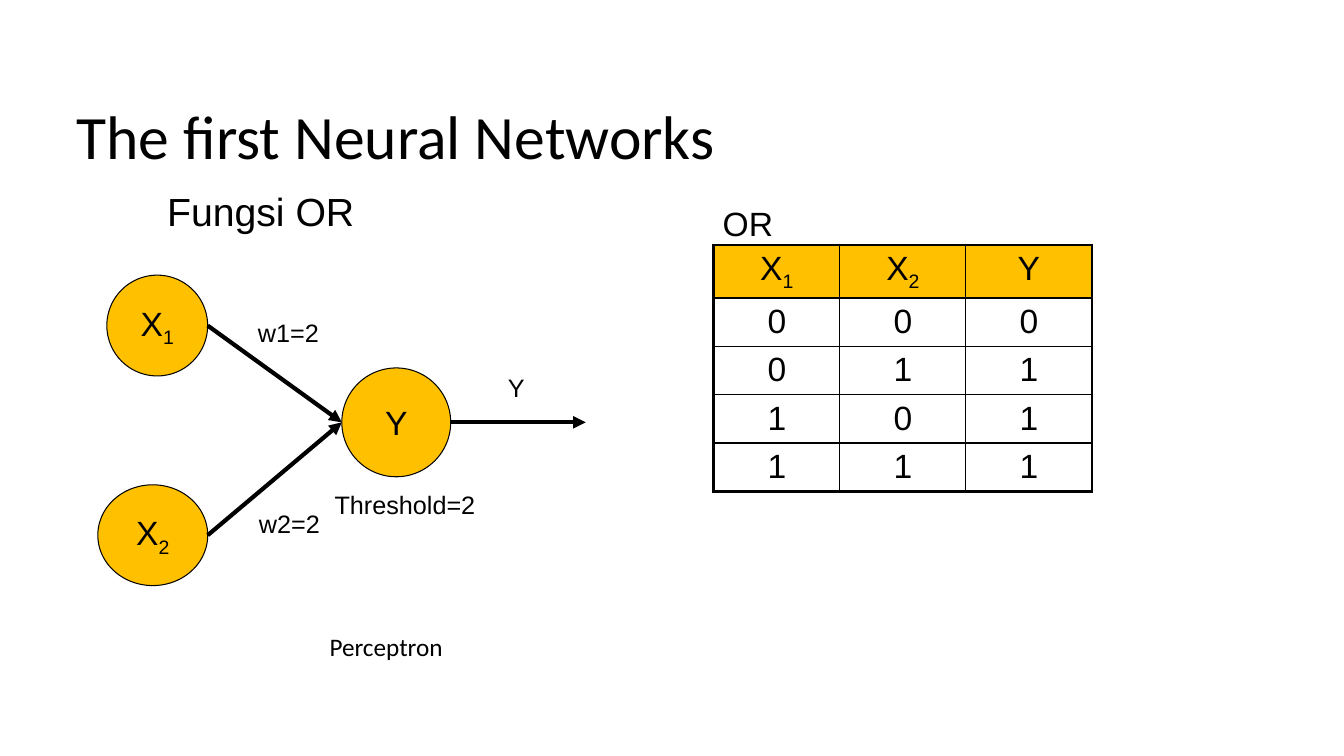
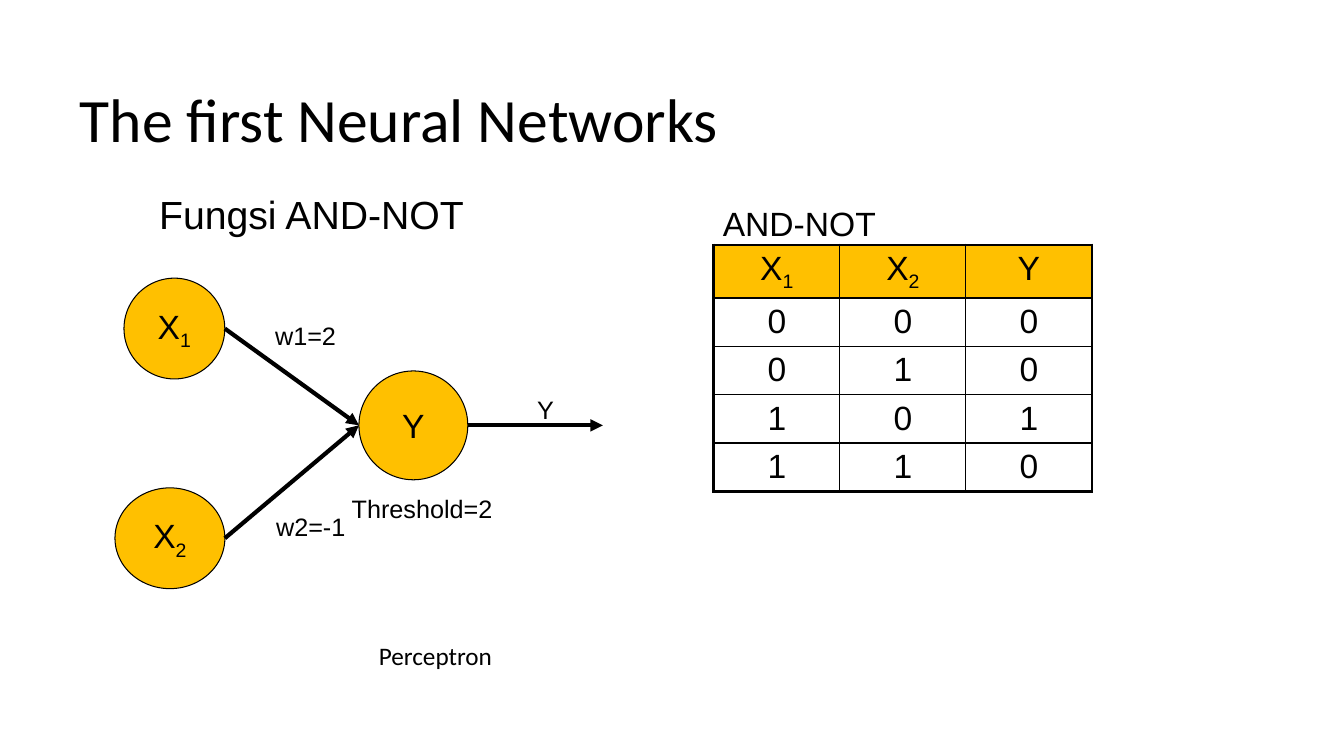
"""Build two slides showing perceptrons for the OR and AND-NOT functions."""
from lxml import etree
from pptx import Presentation
from pptx import util as u
from pptx.dml.color import RGBColor
from pptx.enum import shapes, text
from pptx.oxml import ns

PX = 9144
BLACK, AMBER = "000000", "FFC000"
SANS, HEADING = "Arial", "Calibri"
THIN, THICK = 1, 2.25

TITLE = "The first Neural Networks"
HEADERS = ["X1", "X2", "Y"]
INPUTS = [(0, 0), (0, 1), (1, 0), (1, 1)]
TABLE_LEFT, TABLE_TOP, COLUMN_WIDTH, ROW_HEIGHT = 708, 243, 125, 48

NODES = {"X1": (106, 273, 100, 100), "X2": (97, 481, 109, 100), "Y": (339, 365, 108, 108)}
OUTPUT_LENGTH = 134

SLIDES = [
    {
        "title_at": (66, 76), "shift": (0, 0), "outputs": [0, 1, 1, 1],
        "labels": [
            ("w1=2", 246, 310, 81, 18, SANS),
            ("w2=2", 247, 499, 81, 18, SANS),
            ("Threshold=2", 322, 481, 160, 18, SANS),
            ("Fungsi OR", 156, 181, 206, 28, SANS),
            ("OR", 707, 196, 70, 24, SANS),
            ("Y", 494, 364, 37, 18, SANS),
            ("Perceptron", 317, 621, 134, 18, HEADING),
        ],
    },
    {
        "title_at": (69, 59), "shift": (17, 3), "outputs": [0, 0, 1, 0],
        "labels": [
            ("w1=2", 263, 313, 81, 18, SANS),
            ("w2=-1", 264, 502, 90, 18, SANS),
            ("Threshold=2", 339, 484, 160, 18, SANS),
            ("Fungsi AND-NOT", 148, 184, 325, 28, SANS),
            ("AND-NOT", 707, 196, 172, 24, SANS),
            ("Y", 523, 386, 37, 18, SANS),
            ("Perceptron", 366, 630, 134, 18, HEADING),
        ],
    },
]


def px(*lengths):
    return [u.Emu(length * PX) for length in lengths]


def color(value):
    return RGBColor.from_string(value)


def style(para, size, font=SANS, align=text.PP_ALIGN.LEFT):
    para.alignment = align
    para.font.size = u.Pt(size)
    para.font.name = font
    para.font.bold = False
    para.font.color.rgb = color(BLACK)


def write_symbol(para, symbol):
    para.add_run().text = symbol[0]
    if symbol[1:]:
        span = para.add_run()
        span.text = symbol[1:]
        span._r.get_or_add_rPr().set("baseline", "-25000")
    style(para, 24, align=text.PP_ALIGN.CENTER)


def add_title(page, left, top):
    title = page.shapes.title
    title.left, title.top, title.width, title.height = px(left, top, 1200, 125)
    title.text_frame.text = TITLE
    title.text_frame.vertical_anchor = text.MSO_ANCHOR.MIDDLE
    para = title.text_frame.paragraphs[0]
    para.line_spacing = 0.9
    style(para, 44, HEADING)


def add_label(page, words, left, top, width, size, font):
    box = page.shapes.add_textbox(*px(left, top, width, 12 + round(size * 1.6)))
    frame = box.text_frame
    frame.text = words
    frame.word_wrap = False
    frame.auto_size = text.MSO_AUTO_SIZE.SHAPE_TO_FIT_TEXT
    style(frame.paragraphs[0], size, font)


def add_node(page, symbol, left, top, width, height):
    node = page.shapes.add_shape(shapes.MSO_SHAPE.OVAL, *px(left, top, width, height))
    node.shadow.inherit = False
    node.fill.solid()
    node.fill.fore_color.rgb = color(AMBER)
    node.line.color.rgb = color(BLACK)
    node.line.width = u.Pt(0.75)
    node.text_frame.word_wrap = False
    node.text_frame.vertical_anchor = text.MSO_ANCHOR.MIDDLE
    write_symbol(node.text_frame.paragraphs[0], symbol)


def add_arrow(page, start, end):
    arrow = page.shapes.add_connector(shapes.MSO_CONNECTOR.STRAIGHT, *px(*start, *end))
    arrow.line.color.rgb = color(BLACK)
    arrow.line.width = u.Pt(3)
    etree.SubElement(arrow.line._get_or_add_ln(), ns.qn("a:tailEnd"), type="triangle")
    etree.SubElement(arrow._element.spPr, ns.qn("a:effectLst"))


def add_network(page, shift):
    across, down = shift
    ports = {}
    for symbol, (left, top, width, height) in NODES.items():
        left, top = left + across, top + down
        add_node(page, symbol, left, top, width, height)
        middle = top + height // 2
        ports[symbol] = (left, middle), (left + width, middle)
    entry, leave = ports["Y"]
    for symbol in ("X1", "X2"):
        add_arrow(page, ports[symbol][1], entry)
    add_arrow(page, leave, (leave[0] + OUTPUT_LENGTH, leave[1]))


def set_borders(cell, widths):
    props = cell._tc.get_or_add_tcPr()
    for index, (side, width) in enumerate(widths.items()):
        line = etree.Element(ns.qn(f"a:ln{side}"), w=str(u.Pt(width)))
        fill = etree.SubElement(line, ns.qn("a:solidFill"))
        etree.SubElement(fill, ns.qn("a:srgbClr"), val=BLACK)
        props.insert(index, line)


def add_truth_table(page, outputs):
    rows = [HEADERS] + [[*pair, result] for pair, result in zip(INPUTS, outputs)]
    last_row, last_column = len(rows) - 1, len(HEADERS) - 1
    size = px(TABLE_LEFT, TABLE_TOP, COLUMN_WIDTH * len(HEADERS), ROW_HEIGHT * len(rows))
    table = page.shapes.add_table(len(rows), len(HEADERS), *size).table
    table.first_row = table.horz_banding = False
    for r, values in enumerate(rows):
        for c, value in enumerate(values):
            cell = table.cell(r, c)
            if r == 0:
                cell.fill.solid()
                cell.fill.fore_color.rgb = color(AMBER)
            else:
                cell.fill.background()
            write_symbol(cell.text_frame.paragraphs[0], str(value))
            set_borders(cell, {
                "L": THICK if c == 0 else THIN,
                "R": THICK if c == last_column else THIN,
                "T": THICK if r == 0 else THIN,
                "B": THICK if r == last_row else THIN,
            })


def main():
    deck = Presentation()
    deck.slide_width, deck.slide_height = px(1333, 750)
    for content in SLIDES:
        page = deck.slides.add_slide(deck.slide_layouts[5])
        add_title(page, *content["title_at"])
        add_truth_table(page, content["outputs"])
        add_network(page, content["shift"])
        for label in content["labels"]:
            add_label(page, *label)
    deck.save("out.pptx")


if __name__ == "__main__":
    main()
